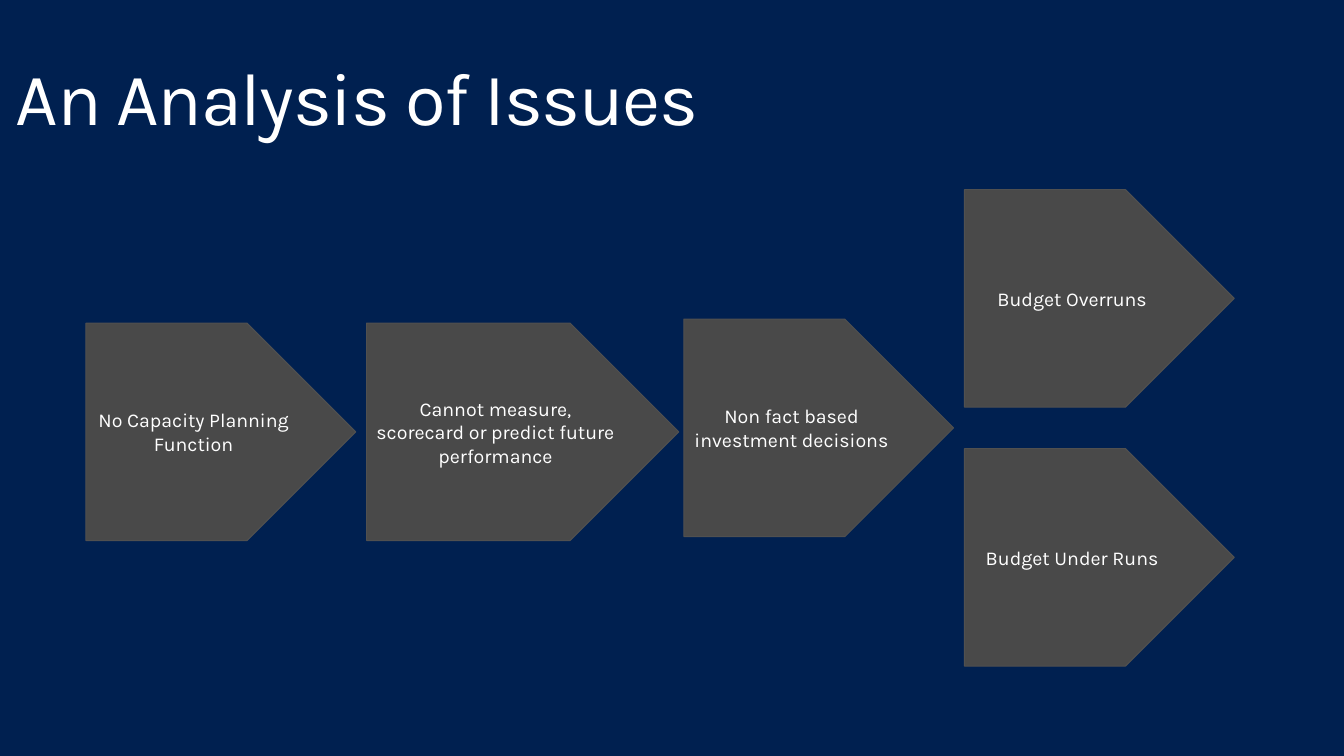
from pptx import Presentation
from pptx.dml.color import RGBColor
from pptx.enum.shapes import MSO_SHAPE
from pptx.enum.text import MSO_ANCHOR, PP_ALIGN
from pptx.util import Inches, Pt

PENTAGON = MSO_SHAPE.PENTAGON
TOP = MSO_ANCHOR.TOP
MIDDLE = MSO_ANCHOR.MIDDLE
CENTER = PP_ALIGN.CENTER

NAVY = RGBColor(0x00, 0x20, 0x50)
CHARCOAL = RGBColor(0x49, 0x49, 0x49)
EDGE_GRAY = RGBColor(0x50, 0x50, 0x50)
WHITE = RGBColor(0xFF, 0xFF, 0xFF)

FONT_NAME = "Karla"
ISSUE_WIDTH = 2.73
ISSUE_HEIGHT = 2.2

ISSUES = [
    ("No Capacity Planning Function", 0.87, 3.27, ISSUE_WIDTH),
    ("Cannot measure, scorecard or predict future performance", 3.71, 3.27, 3.16),
    ("Non fact based investment decisions", 6.92, 3.23, ISSUE_WIDTH),
    ("Budget Overruns", 9.76, 1.92, ISSUE_WIDTH),
    ("Budget Under Runs", 9.76, 4.54, ISSUE_WIDTH),
]


def style_font(paragraph, size):
    paragraph.font.name = FONT_NAME
    paragraph.font.size = Pt(size)
    paragraph.font.color.rgb = WHITE


def add_title(slide, text):
    title = slide.shapes.add_textbox(Inches(0), Inches(0.52), Inches(11.89), Inches(0.81))
    frame = title.text_frame
    frame.word_wrap = True
    frame.vertical_anchor = TOP
    frame.margin_left = frame.margin_right = Inches(0.16)
    frame.margin_top = frame.margin_bottom = Inches(0.1)
    heading = frame.paragraphs[0]
    heading.line_spacing = 0.9
    run = heading.add_run()
    run.text = text
    run._r.get_or_add_rPr().set("spc", "-100")
    style_font(heading, 54)


def add_issue(slide, text, left, top, width):
    issue = slide.shapes.add_shape(
        PENTAGON, Inches(left), Inches(top), Inches(width), Inches(ISSUE_HEIGHT)
    )
    issue.shadow.inherit = False
    issue.fill.solid()
    issue.fill.fore_color.rgb = CHARCOAL
    issue.line.color.rgb = EDGE_GRAY
    issue.line.width = Pt(0.75)
    frame = issue.text_frame
    frame.word_wrap = True
    frame.vertical_anchor = MIDDLE
    label = frame.paragraphs[0]
    label.text = text
    label.alignment = CENTER
    style_font(label, 14.3)


def main():
    deck = Presentation()
    deck.slide_width = Inches(13.6)
    deck.slide_height = Inches(7.65)
    slide = deck.slides.add_slide(deck.slide_layouts[6])
    slide.background.fill.solid()
    slide.background.fill.fore_color.rgb = NAVY
    add_title(slide, "An Analysis of Issues")
    for text, left, top, width in ISSUES:
        add_issue(slide, text, left, top, width)
    deck.save("out.pptx")


if __name__ == "__main__":
    main()
